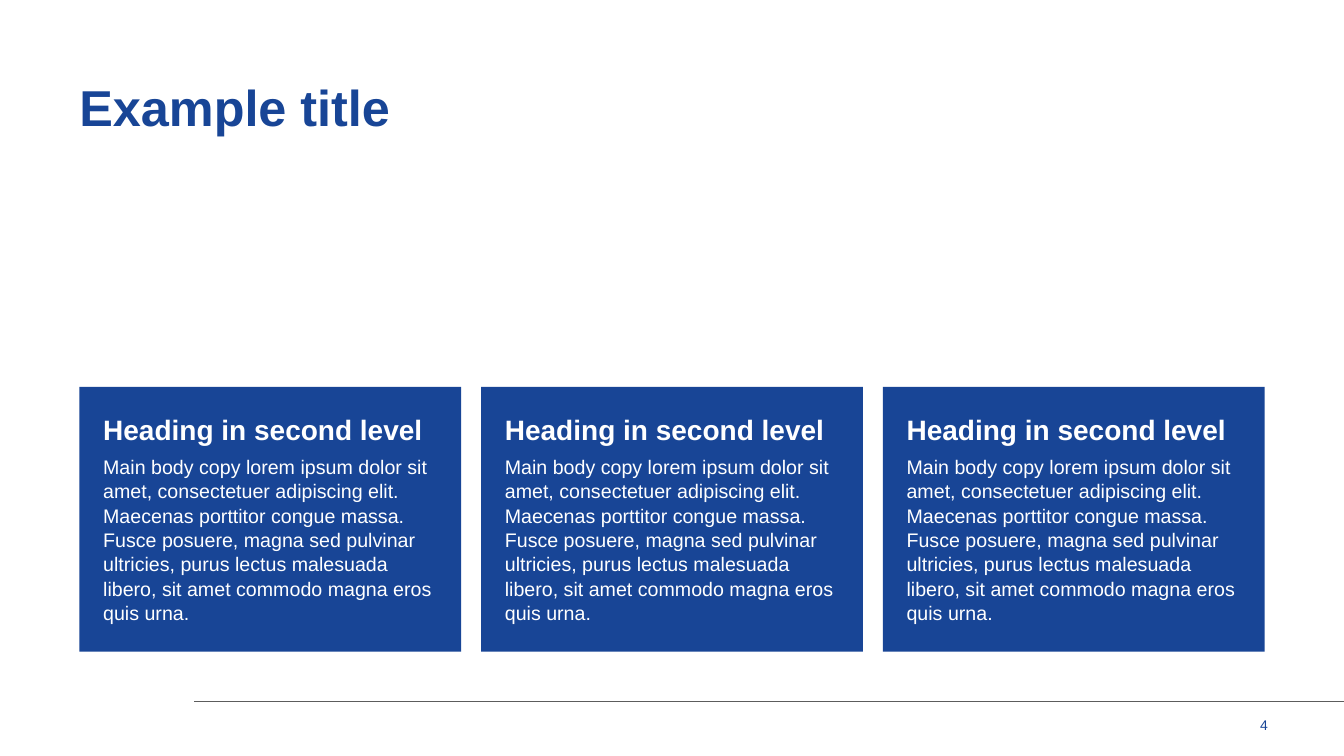
from pptx import Presentation
from pptx.dml.color import RGBColor
from pptx.enum import shapes, text
from pptx.oxml import xmlchemy
from pptx.util import Cm, Pt

BLUE = RGBColor(0x18, 0x45, 0x96)
WHITE = RGBColor(0xFF, 0xFF, 0xFF)
GREY = RGBColor(0x5C, 0x5C, 0x5C)

HEADING = "Heading in second level"
BODY = (
    "Main body copy lorem ipsum dolor sit amet, consectetuer adipiscing elit. "
    "Maecenas porttitor congue massa. Fusce posuere, magna sed pulvinar "
    "ultricies, purus lectus malesuada libero, sit amet commodo magna eros "
    "quis urna."
)


def place(sp, left, top, width, height):
    """Move a shape to a box given in centimetres."""
    sp.left, sp.top, sp.width, sp.height = map(Cm, (left, top, width, height))


def prepare_frame(sp, inset, anchor):
    """Set the margins, wrapping and anchor of a shape and return its frame."""
    tf = sp.text_frame
    tf.word_wrap = True
    tf.auto_size = text.MSO_AUTO_SIZE.NONE
    tf.vertical_anchor = anchor
    tf.margin_left = tf.margin_right = Cm(inset)
    tf.margin_top = tf.margin_bottom = Cm(inset)
    return tf


def write(p, words, size, color, bold=False, spacing=1.0, before=0,
          align=text.PP_ALIGN.LEFT):
    """Write one run into a paragraph without bullet or indent."""
    pPr = p._p.get_or_add_pPr()
    pPr.set("marL", "0")
    pPr.set("indent", "0")
    pPr.append(xmlchemy.OxmlElement("a:buNone"))
    p.alignment = align
    p.line_spacing = spacing
    p.space_before = Pt(before)
    r = p.add_run()
    r.text = words
    r.font.name = "Arial"
    r.font.size = Pt(size)
    r.font.bold = bold
    r.font.color.rgb = color


def add_title(sp, left, top, width, height):
    """Fill the title placeholder."""
    place(sp, left, top, width, height)
    tf = prepare_frame(sp, 0, text.MSO_ANCHOR.MIDDLE)
    write(tf.paragraphs[0], "Example title", 36, BLUE, bold=True, spacing=0.85)


def add_cards(placeholders, left, top, width, height, gap=0.5):
    """Spread the body placeholders as equal blue cards over the box."""
    count = len(placeholders)
    card_width = (width - gap * (count - 1)) / count
    for i, sp in enumerate(placeholders):
        place(sp, left + i * (card_width + gap), top, card_width, height)
        sp.fill.solid()
        sp.fill.fore_color.rgb = BLUE
        tf = prepare_frame(sp, 0.6, text.MSO_ANCHOR.TOP)
        p = tf.paragraphs[0]
        p.level = 1
        write(p, HEADING, 20, WHITE, bold=True, spacing=1.04)
        write(tf.add_paragraph(), BODY, 14, WHITE, spacing=1.04, before=5.7)


def add_footer(s, left, top, width, number):
    """Draw the footer rule and the page number below its right end."""
    right = left + width
    rule = s.shapes.add_connector(
        shapes.MSO_CONNECTOR.STRAIGHT, Cm(left), Cm(top), Cm(right), Cm(top))
    rule.line.color.rgb = GREY
    rule.line.width = Pt(0.75)
    rule._element.spPr.append(xmlchemy.OxmlElement("a:effectLst"))
    sp = s.shapes.add_textbox(Cm(right - 2.63), Cm(top + 0.35), Cm(0.71), Cm(0.53))
    tf = prepare_frame(sp, 0, text.MSO_ANCHOR.MIDDLE)
    write(tf.paragraphs[0], number, 10, BLUE, spacing=0.9,
          align=text.PP_ALIGN.RIGHT)


def main():
    """Build the slide and save it."""
    prs = Presentation()
    prs.slide_width, prs.slide_height = Cm(33.87), Cm(19.05)
    s = prs.slides.add_slide(prs.slide_layouts.get_by_name("Comparison"))
    title, *bodies, spare = s.placeholders
    spare.element.getparent().remove(spare.element)
    add_title(title, 2, 2, 29.87, 1.6)
    add_cards(bodies, 2, 9.75, 29.87, 6.67)
    add_footer(s, 4.9, 17.68, 28.97, "4")
    prs.save("out.pptx")


if __name__ == "__main__":
    main()
